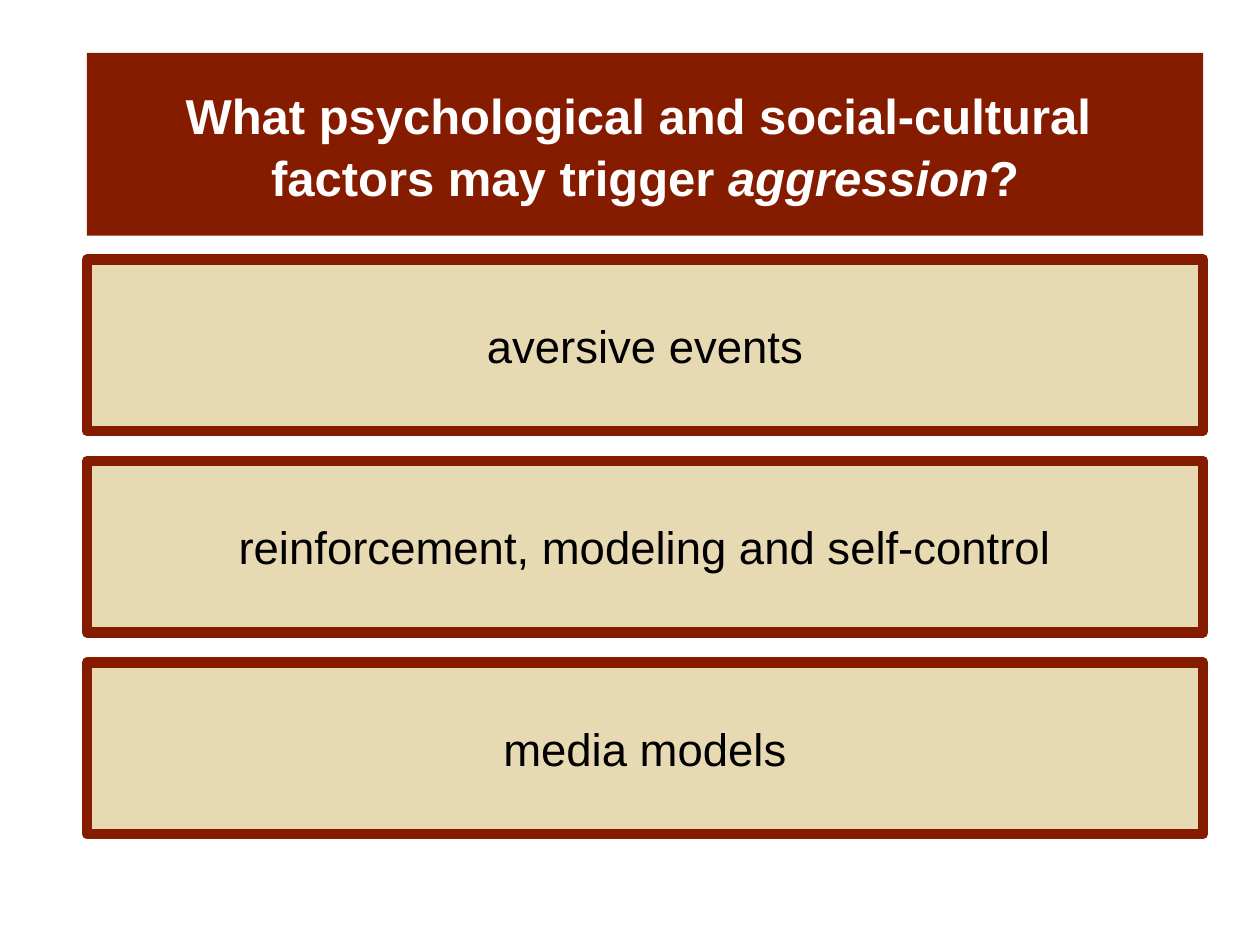
"""Build a slide asking what triggers aggression, with three boxed factors."""
from pptx import Presentation
from pptx.dml.color import RGBColor
from pptx.enum.shapes import MSO_SHAPE
from pptx.enum.text import MSO_ANCHOR, PP_ALIGN
from pptx.util import Inches, Pt

RECT = MSO_SHAPE.RECTANGLE
MIDDLE = MSO_ANCHOR.MIDDLE
CENTER = PP_ALIGN.CENTER

COLORS = {"maroon": "851C00", "sand": "E7D9B1", "white": "FFFFFF", "black": "000000"}
FONT = "Arial"

TITLE = [
    [("What psychological and social-cultural ", False)],
    [("factors may trigger ", False), ("aggression", True), ("?", False)],
]
FACTORS = [
    "aversive events",
    "reinforcement, modeling and self-control",
    "media models",
]

LEFT, WIDTH = 0.69, 8.86
TITLE_TOP, TITLE_HEIGHT = 0.42, 1.45
BOX_TOP, BOX_HEIGHT, BOX_PITCH = 2.06, 1.36, 1.6


def rgb(name):
    return RGBColor.from_string(COLORS[name])


def add_box(slide, lines, *, top, height, fill, color, size, bold=False, border=None, spacing=1.0):
    s = slide.shapes.add_shape(RECT, Inches(LEFT), Inches(top), Inches(WIDTH), Inches(height))
    s.shadow.inherit = False
    s.fill.solid()
    s.fill.fore_color.rgb = rgb(fill)
    if border:
        s.line.color.rgb = rgb(border)
        s.line.width = Pt(6)
    else:
        s.line.fill.background()
    tf = s.text_frame
    tf.word_wrap = True
    tf.vertical_anchor = MIDDLE
    p = tf.paragraphs[0]
    p.alignment = CENTER
    p.line_spacing = spacing
    p.font.size = Pt(size)
    for i, line in enumerate(lines):
        if i:
            p.add_line_break()
        for text, italic in line:
            r = p.add_run()
            r.text = text
            r.font.name = FONT
            r.font.size = Pt(size)
            r.font.bold = bold
            r.font.italic = italic
            r.font.color.rgb = rgb(color)


def main():
    prs = Presentation()
    prs.slide_width, prs.slide_height = Inches(10), Inches(7.5)
    slide = prs.slides.add_slide(prs.slide_layouts[6])
    add_box(slide, TITLE, top=TITLE_TOP, height=TITLE_HEIGHT, fill="maroon",
            color="white", size=28, bold=True, spacing=1.05)
    for i, factor in enumerate(FACTORS):
        add_box(slide, [[(factor, False)]], top=BOX_TOP + i * BOX_PITCH, height=BOX_HEIGHT,
                fill="sand", color="black", size=26, border="maroon")
    prs.save("out.pptx")


if __name__ == "__main__":
    main()
